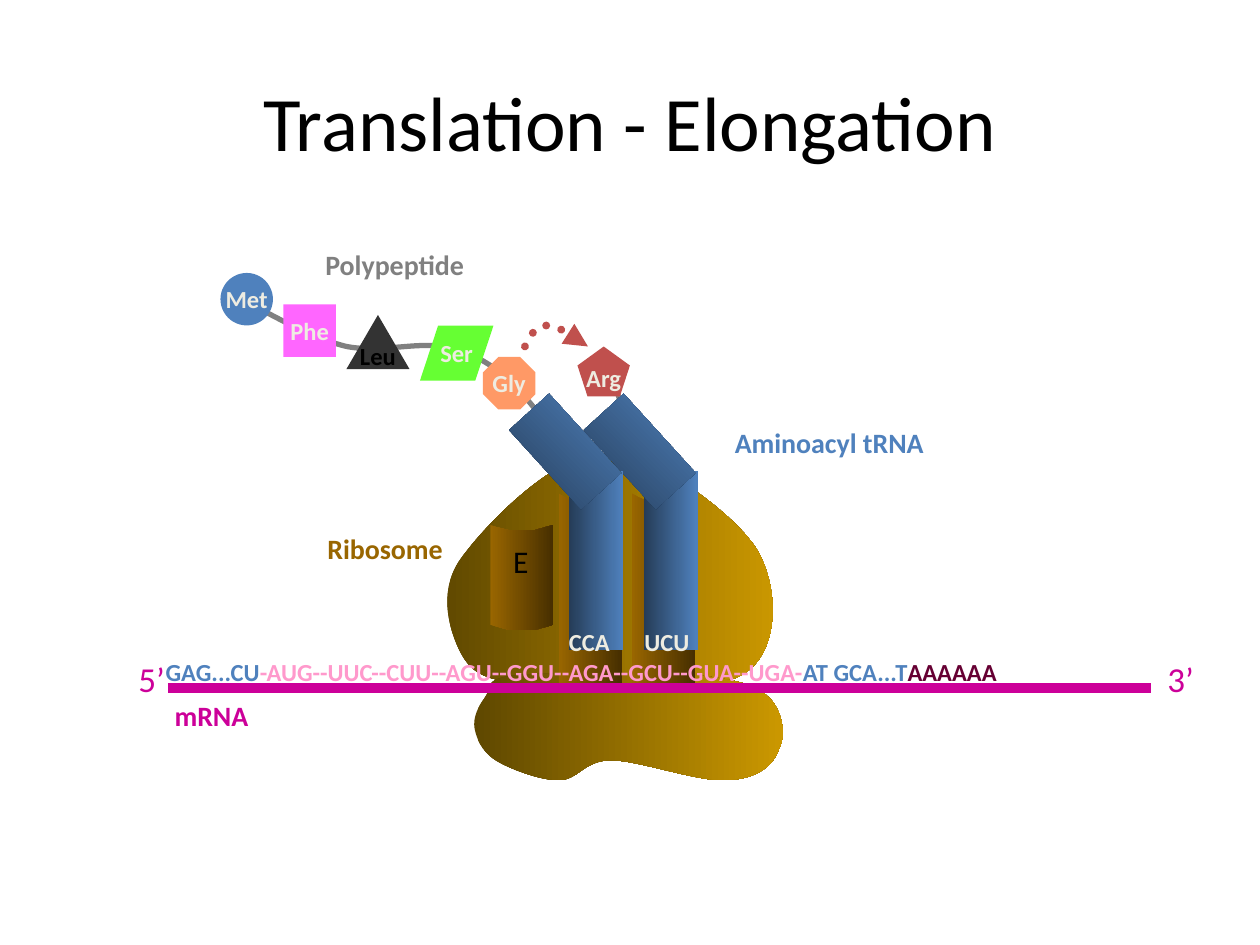
import pptx
import pptx.dml.color
import pptx.enum.dml
import pptx.enum.shapes
import pptx.enum.text
import pptx.oxml
import pptx.oxml.ns
import pptx.util

RGB = pptx.dml.color.RGBColor.from_string
KIND = pptx.enum.shapes.MSO_SHAPE
ALIGN = pptx.enum.text.PP_ALIGN
ANCHOR = pptx.enum.text.MSO_ANCHOR
NAMESPACE = pptx.oxml.ns.nsdecls("a")
qualified = pptx.oxml.ns.qn


class Theme:
    font = "Calibri"
    title, end, site, label, small = 44, 20, 18, 16, 14
    black, cream, gray, charcoal = "000000", "EEECE1", "808080", "333333"
    blue, red, brown, magenta = "4F81BD", "C0504D", "996600", "CC0099"
    pink, green, orange = "FF66FF", "66FF33", "FF9966"
    coding, tail = "FF99CC", "660033"
    ribosome = ("5E4700", "CC9900")
    slot = (brown, "472F00")
    trna = ("253C57", blue)


presentation = pptx.Presentation()
presentation.slide_width = pptx.util.Inches(10)
presentation.slide_height = pptx.util.Inches(7.5)
slide = presentation.slides.add_slide(presentation.slide_layouts[6])
shapes = slide.shapes
cell = presentation.slide_width // 120
gradients = []


def draw_outline(points, curved=False, closed=False):
    scaled = [(x * cell, y * cell) for x, y in points]
    builder = shapes.build_freeform(*scaled[0])
    builder.add_line_segments(scaled[1:], close=closed)
    shape = builder.convert_to_shape()
    shape.shadow.inherit = False
    shape.line.fill.background()
    if curved:
        segments = list(shape.element.iter(qualified("a:lnTo")))
        for i in range(0, len(segments), 3):
            bezier = pptx.oxml.parse_xml(f"<a:cubicBezTo {NAMESPACE}/>")
            segments[i].addprevious(bezier)
            for segment in segments[i:i + 3]:
                bezier.append(segment[0])
                segment.getparent().remove(segment)
    return shape


def write_text(shape, runs, size, bold=True, alignment=ALIGN.LEFT, wrap=False):
    frame = shape.text_frame
    frame.word_wrap = wrap
    paragraph = frame.paragraphs[0]
    paragraph.alignment = alignment
    for text, color in runs:
        run = paragraph.add_run()
        run.text = text
        run.font.name = Theme.font
        run.font.size = pptx.util.Pt(size)
        run.font.bold = bold
        run.font.color.rgb = RGB(color)


large_subunit = [
    (50.6, 65.2), (46.2, 64.8), (45, 64.2), (43.9, 62.2), (42.8, 60.1), (41.65, 56.3),
    (43.9, 53.2), (46.2, 50), (52.7, 43.3), (57.4, 43.1), (62, 43), (69.7, 48.7),
    (72, 52.2), (74.2, 55.7), (74.4, 62), (70.8, 64.2), (67.3, 66.4), (55.1, 65.6), (50.6, 65.2)]
small_subunit = [
    (49.2, 64.3), (45.8, 64.7), (46.9, 65.5), (46.2, 66.4), (45.6, 67.2), (45, 68.3),
    (45.2, 69.4), (45.4, 70.3), (45.8, 71.5), (47.2, 72.4), (48.5, 73.2), (51.4, 74.3),
    (53.2, 74.3), (55.1, 74.3), (55.6, 72.4), (58.2, 72.4), (60.8, 72.4), (66.6, 74.5),
    (69.2, 74.3), (71.9, 74.2), (73.6, 73.1), (74.2, 71.3), (74.9, 70), (74.5, 67.6),
    (73.2, 66.4), (71.9, 65.2), (70.2, 64.7), (66.2, 64.3), (62.2, 64), (52.6, 64), (49.2, 64.3)]
slot_profile = [(0, 0), (0, 0.95), (0.3, 1), (0.7, 1), (1, 0.95), (1, 0),
                (0.7, 0.05), (0.3, 0.05), (0.1, 0.02)]
upper_slots = [(53.2, 47, 18), (60.2, 47, 18), (46.7, 50, 10)]
lower_slots = [(60.2, 64, 2), (53.2, 64, 2)]

for subunit, slots in ((large_subunit, upper_slots), (small_subunit, lower_slots)):
    gradients.append((draw_outline(subunit, curved=True, closed=True), Theme.ribosome, 0))
    for left, top, height in slots:
        outline = [(left + 6 * x, top + height * y) for x, y in slot_profile]
        gradients.append((draw_outline(outline), Theme.slot, 0))

chain = draw_outline([
    (51, 39), (49.7, 37.4), (48.5, 36), (47, 35), (45.5, 34), (44.3, 33.4), (42, 33),
    (39.7, 32.6), (36, 33.6), (33, 33), (30, 32.3), (25.8, 30), (24, 29),
    (22.2, 28), (22.1, 27.5), (22, 27)], curved=True)
transfer = draw_outline([(50, 33), (50.5, 32), (51, 31), (52, 31), (53, 31), (54.5, 32), (56, 33)],
                        curved=True)
for curve, color, width in ((chain, Theme.gray, 3), (transfer, Theme.red, 4.5)):
    curve.fill.background()
    curve.line.color.rgb = RGB(color)
    curve.line.width = pptx.util.Pt(width)
transfer.line.dash_style = pptx.enum.dml.MSO_LINE.ROUND_DOT
transfer_line = transfer.element.spPr.find(qualified("a:ln"))
transfer_line.set("cap", "rnd")
transfer_line.append(pptx.oxml.parse_xml(f'<a:tailEnd {NAMESPACE} type="triangle"/>'))

for ends, color, width in (((59.3, 38.9, 58.7, 37.1), Theme.gray, 3),
                           ((16, 65.53, 109.65, 65.53), Theme.magenta, 6)):
    connector = shapes.add_connector(pptx.enum.shapes.MSO_CONNECTOR.STRAIGHT,
                                     *[round(value * cell) for value in ends])
    connector.line.color.rgb = RGB(color)
    connector.line.width = pptx.util.Pt(width)
    connector.element.spPr.append(pptx.oxml.parse_xml(f"<a:effectLst {NAMESPACE}/>"))

amino_acids = [
    ("Phe", KIND.RECTANGLE, (27, 29, 5, 5), Theme.pink, Theme.cream),
    ("Leu", KIND.ISOSCELES_TRIANGLE, (33, 30, 6, 5.15), Theme.charcoal, Theme.black),
    ("Met", KIND.OVAL, (21, 26, 5, 5), Theme.blue, Theme.cream),
    ("Ser", KIND.PARALLELOGRAM, (40, 31, 7, 5.25), Theme.green, Theme.cream),
    ("Gly", KIND.OCTAGON, (46, 34, 5, 5), Theme.orange, Theme.cream),
    ("Arg", KIND.REGULAR_PENTAGON, (55, 33, 5, 4.75), Theme.red, Theme.cream),
]
for name, kind, box, color, text_color in amino_acids:
    shape = shapes.add_shape(kind, *[round(value * cell) for value in box])
    shape.shadow.inherit = False
    shape.fill.solid()
    shape.fill.fore_color.rgb = RGB(color)
    shape.line.fill.background()
    if kind == KIND.PARALLELOGRAM:
        shape.adjustments[0] = 0.33
    shape.text_frame.vertical_anchor = ANCHOR.MIDDLE
    write_text(shape, [(name, text_color)], Theme.small, alignment=ALIGN.CENTER)

for left in (61.3, 54.2):
    for box, rotation, angle in (((left, 44.9, 5.15, 17), 0, 0),
                                 ((left - 2.95, 37.9, 5.15, 10.2), 317.7, 45)):
        shape = shapes.add_shape(KIND.RECTANGLE, *[round(value * cell) for value in box])
        shape.shadow.inherit = False
        shape.line.fill.background()
        shape.rotation = rotation
        gradients.append((shape, Theme.trna, angle))

for shape, colors, angle in gradients:
    shape.fill.gradient()
    shape.fill.gradient_angle = angle
    shape.element.spPr.find(qualified("a:gradFill")).set("rotWithShape", "0")
    for stop, color in zip(shape.fill.gradient_stops, colors):
        stop.color.rgb = RGB(color)

sequence = [("GAG...CU", Theme.blue),
            ("-AUG--UUC--CUU--AGU--GGU--AGA--GCU--GUA--UGA-", Theme.coding),
            ("AT GCA...T", Theme.blue), ("AAAAAA", Theme.tail)]
labels = [
    ((47.7, 51, 4.8, 6), [("E", Theme.black)], Theme.site, False, False),
    ((30, 50, 14.9, 4.4), [("Ribosome", Theme.brown)], Theme.label, True, True),
    ((29.8, 23, 16, 4.4), [("Polypeptide", Theme.gray)], Theme.label, True, False),
    ((68.8, 39.9, 22.1, 4.4), [("Aminoacyl tRNA", Theme.blue)], Theme.label, True, False),
    ((60.2, 59.1, 7.4, 4), [("UCU", Theme.cream)], Theme.small, True, False),
    ((53, 59.1, 7.4, 4), [("CCA", Theme.cream)], Theme.small, True, False),
    ((14.6, 62, 99.1, 4), sequence, Theme.small, True, True),
    ((12, 62, 5.2, 5.2), [("5’", Theme.magenta)], Theme.end, False, False),
    ((15.45, 65.95, 10.4, 4.4), [("mRNA", Theme.magenta)], Theme.label, True, False),
    ((110, 62, 5.2, 5.2), [("3’", Theme.magenta)], Theme.end, False, False),
]
for box, runs, size, bold, wrap in labels:
    label = shapes.add_textbox(*[round(value * cell) for value in box])
    label.text_frame.auto_size = pptx.enum.text.MSO_AUTO_SIZE.SHAPE_TO_FIT_TEXT
    write_text(label, runs, size, bold, wrap=wrap)

title = shapes.add_textbox(9 * cell, 4 * cell, 102 * cell, 15 * cell)
title.text_frame.vertical_anchor = ANCHOR.MIDDLE
write_text(title, [("Translation - Elongation", Theme.black)], Theme.title, False, ALIGN.CENTER, True)

presentation.save("out.pptx")
